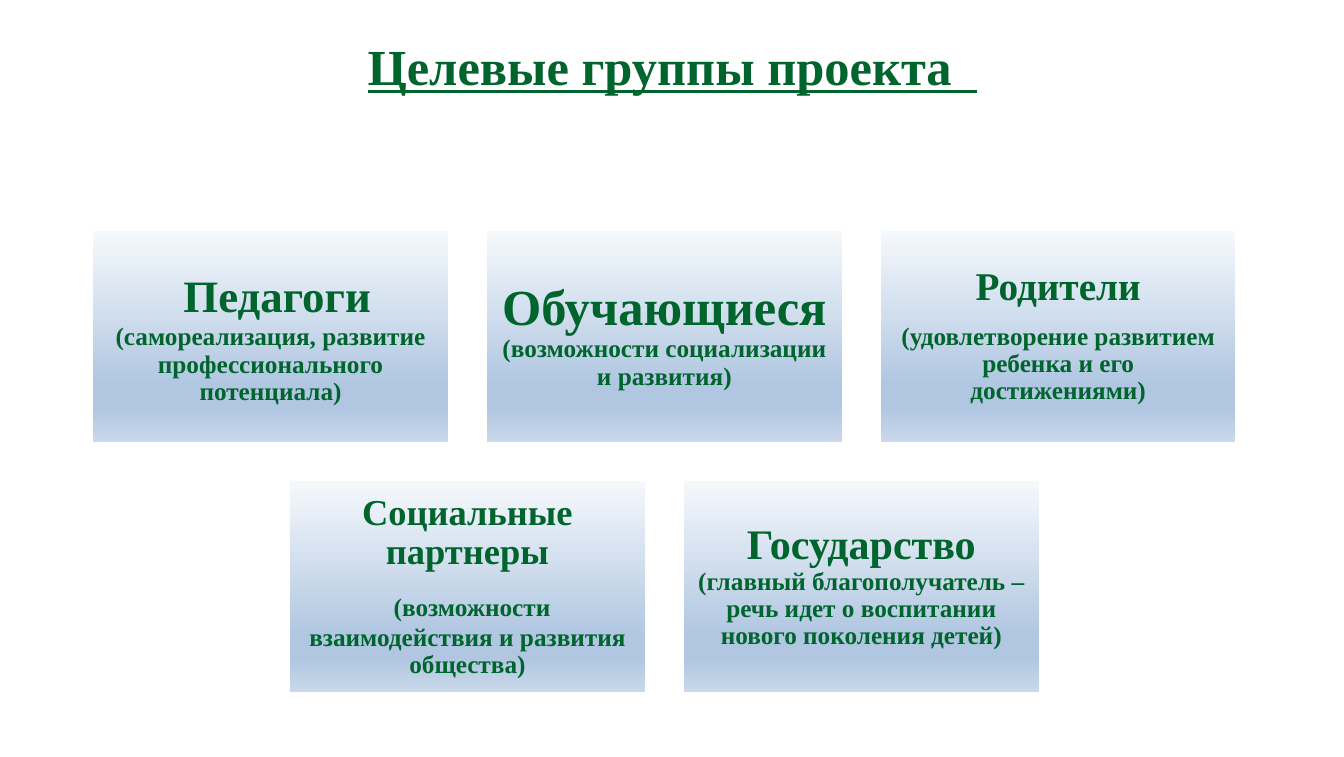
import copy
from dataclasses import dataclass

import pptx
import pptx.dml.color
import pptx.enum.shapes
import pptx.enum.text
import pptx.oxml.ns
import pptx.util

SLIDE_WIDTH, SLIDE_HEIGHT = 13.31, 7.5
GRID_LEFT, GRID_TOP = 0.91, 2.27
COLUMN_PITCH, ROW_PITCH = 3.9, 2.48
CARD_WIDTH, CARD_HEIGHT = 3.54, 2.12
FONT = "Times New Roman"
DETAIL_SIZE = 18
COLORS = {
    "text": "00642D",
    "border": "FFFFFF",
    "top": "F6F9FC",
    "band": "B0C6E1",
    "bottom": "CAD9EB",
}
GRADIENT = [(0, "top"), (0.74, "band"), (0.83, "band"), (1, "bottom")]


@dataclass
class Span:
    text: str
    size: float = DETAIL_SIZE


@dataclass
class Card:
    column: float
    row: int
    inset: float
    paragraphs: list[list[Span]]


CARDS = [
    Card(0, 0, 0.16, [[
        Span(" ", 38),
        Span("Педагоги ", 32),
        Span("(самореализация, развитие профессионального потенциала)"),
    ]]),
    Card(1, 0, 0.15, [[
        Span("Обучающиеся ", 36),
        Span("(возможности социализации и развития)"),
    ]]),
    Card(2, 0, 0.12, [
        [Span("Родители", 28)],
        [Span("(удовлетворение развитием ребенка и его достижениями)")],
    ]),
    Card(0.5, 1, 0.11, [
        [Span("Социальные партнеры", 26)],
        [Span(" ", 26), Span("(возможности взаимодействия и развития общества)")],
    ]),
    Card(1.5, 1, 0.12, [[
        Span("Государство ", 30),
        Span("(главный благополучатель – речь идет о воспитании нового поколения детей)"),
    ]]),
]


def color(name: str) -> pptx.dml.color.RGBColor:
    return pptx.dml.color.RGBColor.from_string(COLORS[name])


def add_span(para, span: Span, underline: bool = False) -> None:
    run = para.add_run()
    run.text = span.text
    run.font.name = FONT
    run.font.size = pptx.util.Pt(span.size)
    run.font.bold = True
    run.font.underline = underline
    run.font.color.rgb = color("text")


def fill_gradient(box) -> None:
    box.fill.gradient()
    box.fill.gradient_angle = 270
    stops = box._element.spPr.find(".//" + pptx.oxml.ns.qn("a:gsLst"))
    while len(stops) < len(GRADIENT):
        stops.append(copy.deepcopy(stops[0]))
    for stop, (position, name) in zip(box.fill.gradient_stops, GRADIENT):
        stop.position = position
        stop.color.rgb = color(name)


def add_title(page, text: str) -> None:
    title = page.shapes.title
    title.left, title.top = pptx.util.Inches(0.67), pptx.util.Inches(0.3)
    title.width, title.height = pptx.util.Inches(11.98), pptx.util.Inches(1.25)
    title.text_frame.vertical_anchor = pptx.enum.text.MSO_ANCHOR.TOP
    para = title.text_frame.paragraphs[0]
    para.alignment = pptx.enum.text.PP_ALIGN.CENTER
    add_span(para, Span(text, 36), underline=True)


def add_card(page, card: Card) -> None:
    box = page.shapes.add_shape(
        pptx.enum.shapes.MSO_SHAPE.RECTANGLE,
        pptx.util.Inches(GRID_LEFT + card.column * COLUMN_PITCH),
        pptx.util.Inches(GRID_TOP + card.row * ROW_PITCH),
        pptx.util.Inches(CARD_WIDTH),
        pptx.util.Inches(CARD_HEIGHT),
    )
    box.shadow.inherit = False
    fill_gradient(box)
    box.line.color.rgb = color("border")
    box.line.width = pptx.util.Pt(2)
    frame = box.text_frame
    frame.word_wrap = True
    frame.vertical_anchor = pptx.enum.text.MSO_ANCHOR.MIDDLE
    inset = pptx.util.Inches(card.inset)
    frame.margin_left = frame.margin_right = inset
    frame.margin_top = frame.margin_bottom = inset
    for index, spans in enumerate(card.paragraphs):
        para = frame.add_paragraph() if index else frame.paragraphs[0]
        para.alignment = pptx.enum.text.PP_ALIGN.CENTER
        para.line_spacing = 0.9
        para.space_after = pptx.util.Pt(round(0.35 * spans[0].size))
        for span in spans:
            add_span(para, span)


def main() -> None:
    deck = pptx.Presentation()
    deck.slide_width = pptx.util.Inches(SLIDE_WIDTH)
    deck.slide_height = pptx.util.Inches(SLIDE_HEIGHT)
    page = deck.slides.add_slide(deck.slide_layouts.get_by_name("Title Only"))
    add_title(page, "Целевые группы проекта  ")
    for card in CARDS:
        add_card(page, card)
    deck.save("out.pptx")


if __name__ == "__main__":
    main()
